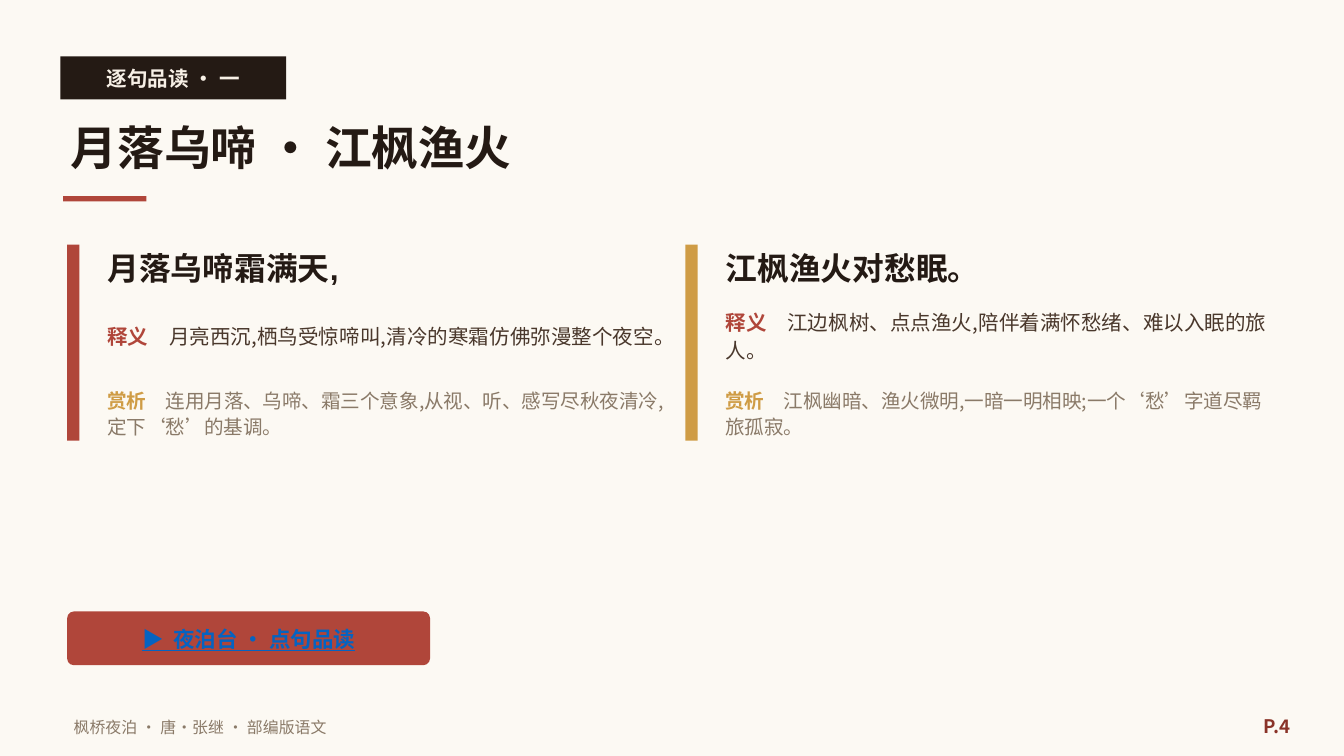
from dataclasses import dataclass

from lxml.etree import SubElement
from pptx import Presentation
from pptx.dml.color import RGBColor
from pptx.enum.shapes import MSO_SHAPE as Shape
from pptx.enum.text import MSO_ANCHOR as Anchor, PP_ALIGN as Align
from pptx.oxml.ns import qn
from pptx.util import Inches, Pt


@dataclass(frozen=True)
class Theme:
    """Colours, fonts and type sizes of the slide."""
    paper: str = "FCF9F3"
    ink: str = "241A14"
    cream: str = "F7F0E6"
    red: str = "B0463A"
    gold: str = "CF9C45"
    brown: str = "4A382C"
    muted: str = "8A7A68"
    maroon: str = "8A3328"
    link: str = "0563C1"
    cjk: str = "Noto Sans CJK SC"
    latin: str = "Arial"
    title: float = 25
    verse: float = 17
    button: float = 11.5
    body: float = 11
    note: float = 10.5
    page: float = 10
    footer: float = 8.5


T = Theme()

VERSES = [
    (0.5, T.red, "月落乌啼霜满天,",
     "月亮西沉,栖鸟受惊啼叫,清冷的寒霜仿佛弥漫整个夜空。",
     "连用月落、乌啼、霜三个意象,从视、听、感写尽秋夜清冷,定下‘愁’的基调。"),
    (5.1, T.gold, "江枫渔火对愁眠。",
     "江边枫树、点点渔火,陪伴着满怀愁绪、难以入眠的旅人。",
     "江枫幽暗、渔火微明,一暗一明相映;一个‘愁’字道尽羁旅孤寂。"),
]


def add_block(s, x, y, w, h, color, kind=Shape.RECTANGLE):
    """Add a flat filled shape and return it."""
    sp = s.shapes.add_shape(kind, Inches(x), Inches(y), Inches(w), Inches(h))
    sp.shadow.inherit = False
    sp.fill.solid()
    sp.fill.fore_color.rgb = RGBColor.from_string(color)
    sp.line.fill.background()
    return sp


def add_run(p, text, *, size, color, bold=False, underline=None, font=T.cjk):
    """Append a formatted run to a paragraph."""
    r = p.add_run()
    r.text = text
    f = r.font
    f.size, f.bold, f.underline, f.name = Pt(size), bold, underline, font
    f.color.rgb = RGBColor.from_string(color)
    SubElement(r._r.get_or_add_rPr(), qn("a:ea"), typeface=T.cjk)


def add_text(s, x, y, w, h, text="", *, align=Align.LEFT, leading=None, **fmt):
    """Add a vertically centred text box and return its paragraph."""
    tf = s.shapes.add_textbox(Inches(x), Inches(y), Inches(w), Inches(h)).text_frame
    tf.word_wrap = True
    tf.vertical_anchor = Anchor.MIDDLE
    p = tf.paragraphs[0]
    p.alignment = align
    if leading:
        p.line_spacing = Pt(leading)
    if text:
        add_run(p, text, **fmt)
    return p


def add_labelled(s, x, y, h, label, text, *, size, leading, accent, color):
    """Add a paragraph that opens with a bold coloured label."""
    p = add_text(s, x, y, 4.3, h, leading=leading)
    add_run(p, label + "　", size=size, color=accent, bold=True)
    add_run(p, text, size=size, color=color)


def add_verse(s, x, bar, verse, meaning, comment):
    """Add one verse with its side bar, meaning and appreciation."""
    add_block(s, x, 1.82, 0.09, 1.46, bar)
    left = x + 0.2
    add_text(s, left, 1.78, 4.3, 0.42, verse, size=T.verse, color=T.ink,
             bold=True, font=T.latin)
    add_labelled(s, left, 2.24, 0.5, "释义", meaning, size=T.body, leading=15,
                 accent=T.red, color=T.brown)
    add_labelled(s, left, 2.76, 0.62, "赏析", comment, size=T.note, leading=14,
                 accent=T.gold, color=T.muted)


def add_header(s):
    """Add the section tag, the title and its underline."""
    add_block(s, 0.45, 0.42, 1.68, 0.32, T.ink)
    add_text(s, 0.45, 0.41, 1.68, 0.34, "逐句品读 · 一", size=T.body,
             color=T.cream, bold=True, align=Align.CENTER)
    add_text(s, 0.43, 0.78, 9, 0.62, "月落乌啼 · 江枫渔火", size=T.title,
             color=T.ink, bold=True)
    add_block(s, 0.47, 1.46, 0.62, 0.04, T.red)


def add_button(s):
    """Add the rounded button with its underlined label."""
    sp = add_block(s, 0.5, 4.55, 2.7, 0.4, T.red, Shape.ROUNDED_RECTANGLE)
    sp.adjustments[0] = 0.125
    add_text(s, 0.5, 4.54, 2.7, 0.42, "▶  夜泊台 · 点句品读", size=T.button,
             color=T.link, bold=True, underline=True, align=Align.CENTER)


def add_footer(s):
    """Add the source line and the page number."""
    add_text(s, 0.45, 5.26, 6, 0.3, "枫桥夜泊 · 唐·张继 · 部编版语文",
             size=T.footer, color=T.muted)
    add_text(s, 9.1, 5.24, 0.6, 0.32, "P.4", size=T.page, color=T.maroon,
             bold=True, align=Align.RIGHT)


def main():
    """Build the slide and save it."""
    prs = Presentation()
    prs.slide_width = Inches(10)
    prs.slide_height = Inches(10 * 9 / 16)
    s = prs.slides.add_slide(prs.slide_layouts[6])
    s.background.fill.solid()
    s.background.fill.fore_color.rgb = RGBColor.from_string(T.paper)
    add_header(s)
    for verse in VERSES:
        add_verse(s, *verse)
    add_button(s)
    add_footer(s)
    prs.save("out.pptx")


if __name__ == "__main__":
    main()
